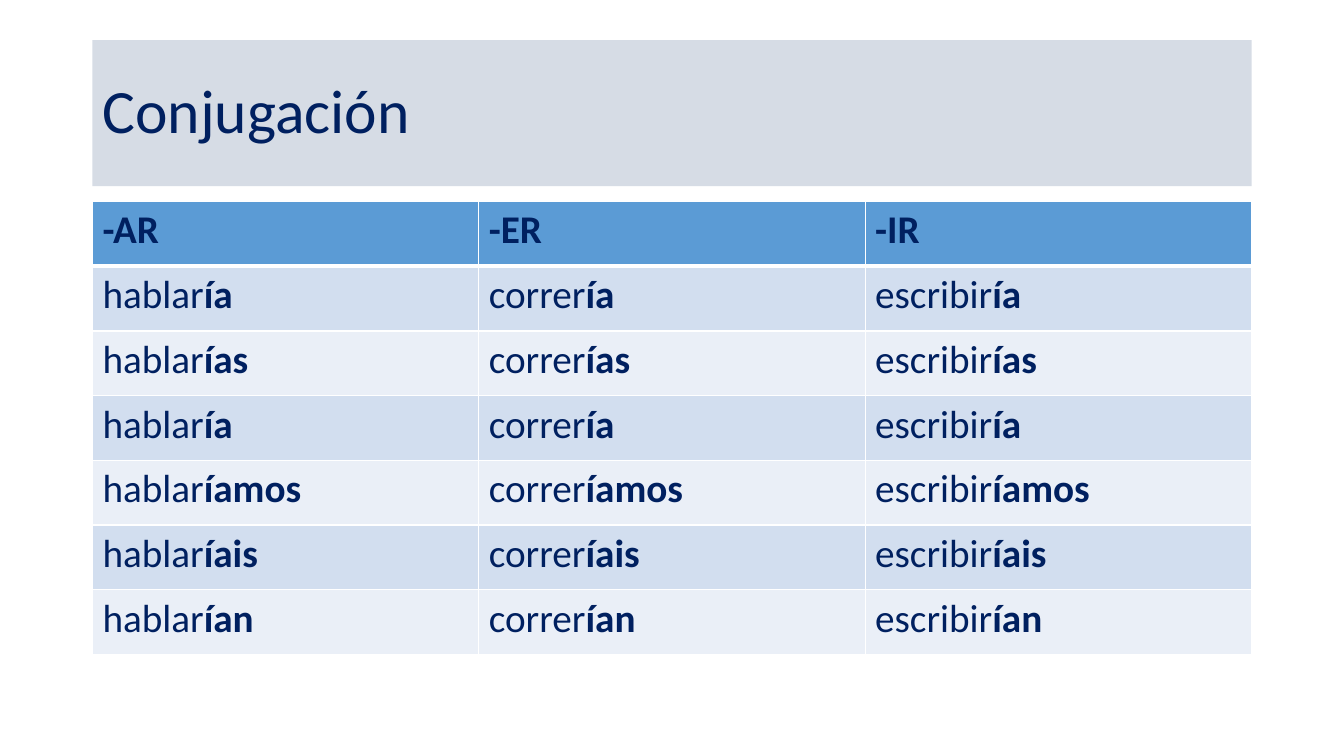
from lxml import etree
from pptx import Presentation
from pptx.dml.color import RGBColor
from pptx.enum.text import MSO_ANCHOR, PP_ALIGN
from pptx.oxml.ns import qn
from pptx.util import Cm, Pt

TITLE = "Conjugación"
VERBS = [("-AR", "hablar"), ("-ER", "correr"), ("-IR", "escribir")]
ENDINGS = ["ía", "ías", "ía", "íamos", "íais", "ían"]

NAVY = RGBColor(0x00, 0x20, 0x60)
TITLE_FILL = RGBColor(0xD6, 0xDC, 0xE5)
HEADER_FILL = RGBColor(0x5B, 0x9B, 0xD5)
BAND_FILLS = [RGBColor(0xD2, 0xDE, 0xEF), RGBColor(0xEA, 0xEF, 0xF7)]
WHITE = RGBColor(0xFF, 0xFF, 0xFF)

MIDDLE = MSO_ANCHOR.MIDDLE
LEFT_ALIGNED = PP_ALIGN.LEFT
TITLE_ONLY = 5

LEFT, WIDTH = Cm(2.33), Cm(29.21)
TITLE_TOP, TITLE_HEIGHT = Cm(1.01), Cm(3.68)
TABLE_TOP, ROW_HEIGHT = Cm(5.08), Cm(1.63)

TITLE_FONT = {"name": "Calibri", "size": Pt(44), "bold": False}
CELL_FONT = {"name": "Calibri", "size": Pt(28)}


def add_run(paragraph, text, font_format):
    run = paragraph.add_run()
    run.text = text
    for name, value in font_format.items():
        setattr(run.font, name, value)
    run.font.color.rgb = NAVY


def add_borders(cell, bottom_width):
    """Draw white cell borders; call before filling, as the XML order matters."""
    properties = cell._tc.get_or_add_tcPr()
    widths = {"a:lnL": 1, "a:lnR": 1, "a:lnT": 1, "a:lnB": bottom_width}
    for tag, width in widths.items():
        line = etree.SubElement(properties, qn(tag), w=str(Pt(width)))
        fill = etree.SubElement(line, qn("a:solidFill"))
        etree.SubElement(fill, qn("a:srgbClr"), val=str(WHITE))


def add_title(slide):
    title = slide.shapes.title
    box = {"left": LEFT, "top": TITLE_TOP, "width": WIDTH, "height": TITLE_HEIGHT}
    for name, value in box.items():
        setattr(title, name, value)
    title.fill.solid()
    title.fill.fore_color.rgb = TITLE_FILL
    title.text_frame.vertical_anchor = MIDDLE
    title.text_frame.word_wrap = True
    paragraph = title.text_frame.paragraphs[0]
    paragraph.alignment = LEFT_ALIGNED
    paragraph.line_spacing = 0.9
    add_run(paragraph, TITLE, TITLE_FONT)


def add_conjugation_table(slide):
    row_count = len(ENDINGS) + 1
    table = slide.shapes.add_table(
        row_count, len(VERBS), LEFT, TABLE_TOP, WIDTH, ROW_HEIGHT * row_count
    ).table
    for column, (group, stem) in enumerate(VERBS):
        for row, ending in enumerate([group] + ENDINGS):
            is_header = row == 0
            cell = table.cell(row, column)
            add_borders(cell, 3 if is_header else 1)
            cell.fill.solid()
            cell.fill.fore_color.rgb = HEADER_FILL if is_header else BAND_FILLS[(row - 1) % 2]
            paragraph = cell.text_frame.paragraphs[0]
            if not is_header:
                add_run(paragraph, stem, {**CELL_FONT, "bold": False})
            add_run(paragraph, ending, {**CELL_FONT, "bold": True})


def main():
    presentation = Presentation()
    presentation.slide_width = Cm(33.87)
    presentation.slide_height = Cm(19.05)
    slide = presentation.slides.add_slide(presentation.slide_layouts[TITLE_ONLY])
    add_title(slide)
    add_conjugation_table(slide)
    presentation.save("out.pptx")


if __name__ == "__main__":
    main()
